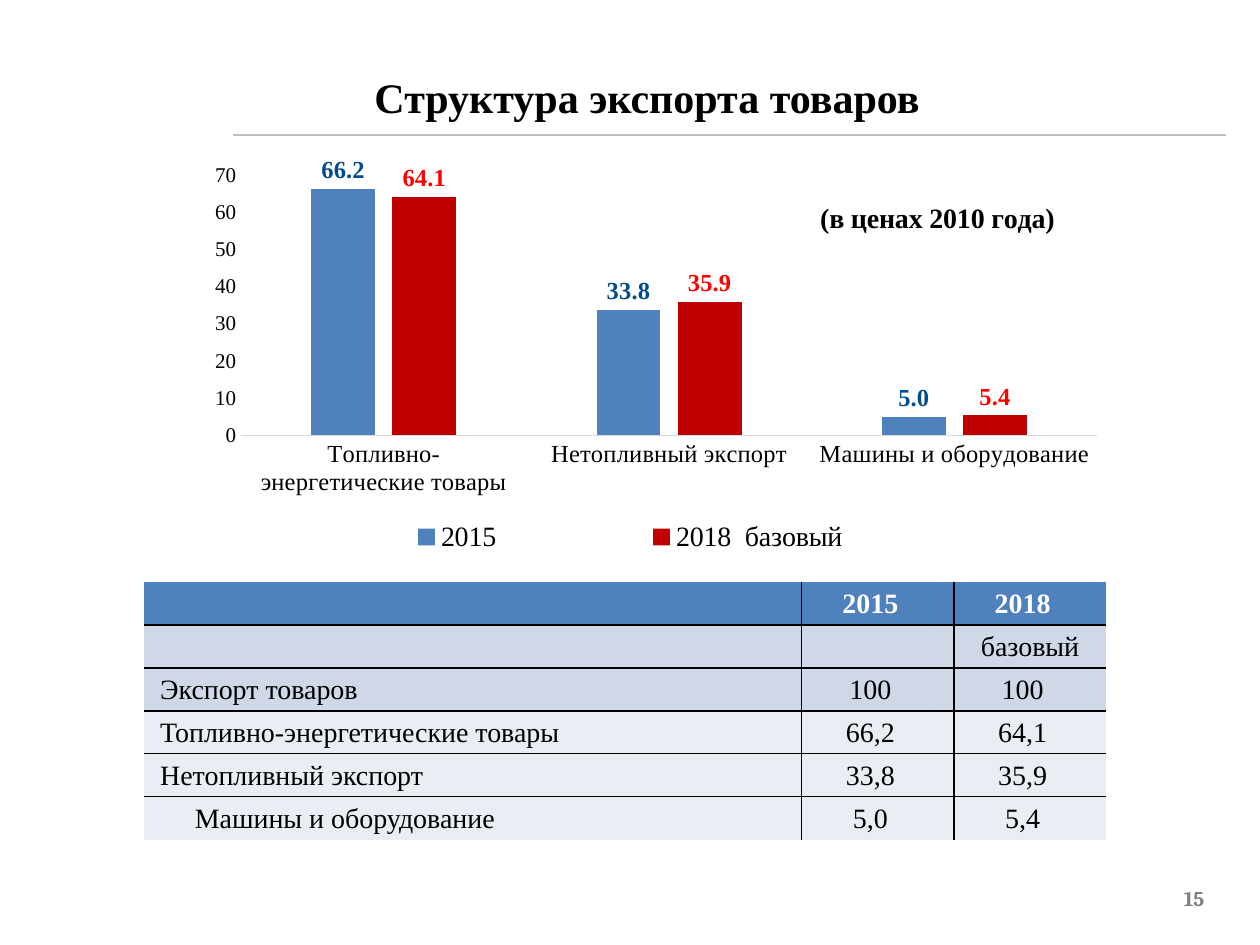
from lxml import etree
from pptx import Presentation
from pptx.chart.data import CategoryChartData
from pptx.dml.color import RGBColor
from pptx.enum.chart import XL_CHART_TYPE, XL_LABEL_POSITION, XL_LEGEND_POSITION, XL_TICK_MARK
from pptx.enum.shapes import MSO_CONNECTOR
from pptx.enum.text import MSO_ANCHOR, PP_ALIGN
from pptx.oxml import parse_xml
from pptx.oxml.ns import nsdecls, qn
from pptx.util import Cm, Pt

SERIF = "Times New Roman"


def style(font, size, color="000000", bold=False, name=SERIF):
    font.name, font.size, font.bold = name, Pt(size), bold
    font.color.rgb = RGBColor.from_string(color)


def manual_layout(x, y, w=None, h=None, inner=False):
    """Return a chart layout element; positions are fractions of the chart."""
    parts = ['<c:layoutTarget val="inner"/>'] if inner else []
    parts += ['<c:xMode val="edge"/><c:yMode val="edge"/>']
    sizes = {"x": x, "y": y, "w": w, "h": h}
    parts += [f'<c:{tag} val="{v}"/>' for tag, v in sizes.items() if v is not None]
    return parse_xml(f'<c:layout {nsdecls("c")}><c:manualLayout>'
                     f'{"".join(parts)}</c:manualLayout></c:layout>')


prs = Presentation()
prs.slide_width, prs.slide_height = Cm(25.4), Cm(19.05)
slide = prs.slides.add_slide(prs.slide_layouts[6])
shapes = slide.shapes

# Heading with its rule, and the page number
rule = shapes.add_connector(MSO_CONNECTOR.STRAIGHT, Cm(4.7), Cm(2.72), Cm(24.71), Cm(2.72))
rule.line.color.rgb = RGBColor.from_string("BFBFBF")
rule.line.width = Pt(1)
etree.SubElement(rule._element.spPr, qn("a:effectLst"))

heading = shapes.add_textbox(Cm(6.3), Cm(1.32), Cm(12.62), Cm(1.27)).text_frame
heading.word_wrap = False
heading.text = "Структура экспорта товаров"
heading.paragraphs[0]._p.get_or_add_pPr().set("indent", str(Cm(1)))
style(heading.paragraphs[0].runs[0].font, 24, bold=True)

page_number = shapes.add_textbox(Cm(23.06), Cm(17.93), Cm(1.22), Cm(0.36)).text_frame
page_number.margin_left = page_number.margin_right = 0
page_number.margin_top = page_number.margin_bottom = 0
page_number.vertical_anchor = MSO_ANCHOR.MIDDLE
page_number.word_wrap = False
page_number.text = "15"
page_number.paragraphs[0].alignment = PP_ALIGN.RIGHT
style(page_number.paragraphs[0].runs[0].font, 12, "7F7F7F", True, "Cambria")

# Export shares chart
shares = CategoryChartData(number_format="0.0")
shares.categories = ["Топливно-энергетические товары", "Нетопливный экспорт",
                     "Машины и оборудование"]
shares.add_series("2015", (66.2, 33.8, 5.0))
shares.add_series("2018  базовый", (64.1, 35.9, 5.4))
chart = shapes.add_chart(XL_CHART_TYPE.COLUMN_CLUSTERED, Cm(2.9), Cm(3.12),
                         Cm(19.61), Cm(8.2), shares).chart
style(chart.font, 10)

chart.has_title = True
price_basis = chart.chart_title.text_frame
price_basis.text = "(в ценах 2010 года)"
style(price_basis.paragraphs[0].runs[0].font, 16, bold=True)
chart.chart_title.include_in_layout = True
title_xml = chart.chart_title._element
for old in title_xml.findall(qn("c:layout")):
    title_xml.remove(old)
title_xml.find(qn("c:tx")).addnext(manual_layout(0.69, 0.1))

chart.has_legend = True
chart.legend.position = XL_LEGEND_POSITION.BOTTOM
chart.legend.include_in_layout = False
style(chart.legend.font, 16)
legend_xml = chart.legend._element
for old in legend_xml.findall(qn("c:layout")):
    legend_xml.remove(old)
legend_xml.find(qn("c:legendPos")).addnext(manual_layout(0.13, 0.89, 0.74, 0.1))

plot = chart.plots[0]
plot.gap_width, plot.overlap, plot.vary_by_categories = 219, -27, False
plot_area = chart._chartSpace.chart.plotArea
for old in plot_area.findall(qn("c:layout")):
    plot_area.remove(old)
plot_area.insert(0, manual_layout(0.1, 0.05, 0.88, 0.64, inner=True))

for series, (bar, label) in zip(plot.series, [("4F81BD", "004C8E"), ("C00000", "FF0000")]):
    series.format.fill.solid()
    series.format.fill.fore_color.rgb = RGBColor.from_string(bar)
    labels = series.data_labels
    labels.show_value = True
    labels.number_format, labels.number_format_is_linked = "0.0", False
    labels.position = XL_LABEL_POSITION.OUTSIDE_END
    style(labels.font, 14, label, True)

for axis, size in ((chart.category_axis, 14), (chart.value_axis, 12)):
    axis.major_tick_mark = axis.minor_tick_mark = XL_TICK_MARK.NONE
    axis.has_major_gridlines = False
    style(axis.tick_labels.font, size)
chart.category_axis.format.line.color.rgb = RGBColor.from_string("D9D9D9")
chart.category_axis.format.line.width = Pt(0.75)
chart.value_axis.format.line.fill.background()
chart.value_axis.minimum_scale, chart.value_axis.maximum_scale = 0, 70
chart.value_axis.major_unit = 10
chart.value_axis.tick_labels.number_format = "0"
chart.value_axis.tick_labels.number_format_is_linked = False

# Export shares table
rows = [
    ("4F81BD", "", "2015", "2018"),
    ("D0D8E8", "", "", "базовый"),
    ("D0D8E8", "Экспорт товаров", "100", "100"),
    ("E9EDF4", "Топливно-энергетические товары", "66,2", "64,1"),
    ("E9EDF4", "Нетопливный экспорт", "33,8", "35,9"),
    ("E9EDF4", "Машины и оборудование", "5,0", "5,4"),
]
widths = (Cm(13.26), Cm(3.07), Cm(3.07))
last_row, last_col = len(rows) - 1, len(widths) - 1
table = shapes.add_table(len(rows), len(widths), Cm(2.9), Cm(11.73),
                         sum(widths), Cm(5.2)).table
for column, width in zip(table.columns, widths):
    column.width = width

for r, (fill, *texts) in enumerate(rows):
    for c, text in enumerate(texts):
        cell = table.cell(r, c)
        cell.vertical_anchor = MSO_ANCHOR.MIDDLE
        cell.margin_left = Cm(0.03) if c else Cm(1.03 if r == last_row else 0.33)
        cell.margin_right = Cm(0.33) if c and text != "базовый" else Cm(0.03)
        cell.margin_top, cell.margin_bottom = Cm(0.03), 0
        cell.text = text
        paragraph = cell.text_frame.paragraphs[0]
        paragraph.alignment = PP_ALIGN.CENTER if c else PP_ALIGN.LEFT
        for run in paragraph.runs:
            style(run.font, 16, "000000" if r else "FFFFFF", r == 0)
        inner_sides = {"lnL": c > 0, "lnR": c < last_col, "lnT": r > 0, "lnB": r < last_row}
        for side, is_inner in inner_sides.items():
            paint = ('<a:solidFill><a:srgbClr val="000000"/></a:solidFill>'
                     if is_inner else "<a:noFill/>")
            cell._tc.get_or_add_tcPr().append(parse_xml(
                f'<a:{side} {nsdecls("a")} w="{Pt(1)}">{paint}</a:{side}>'))
        cell.fill.solid()
        cell.fill.fore_color.rgb = RGBColor.from_string(fill)

prs.save("out.pptx")
